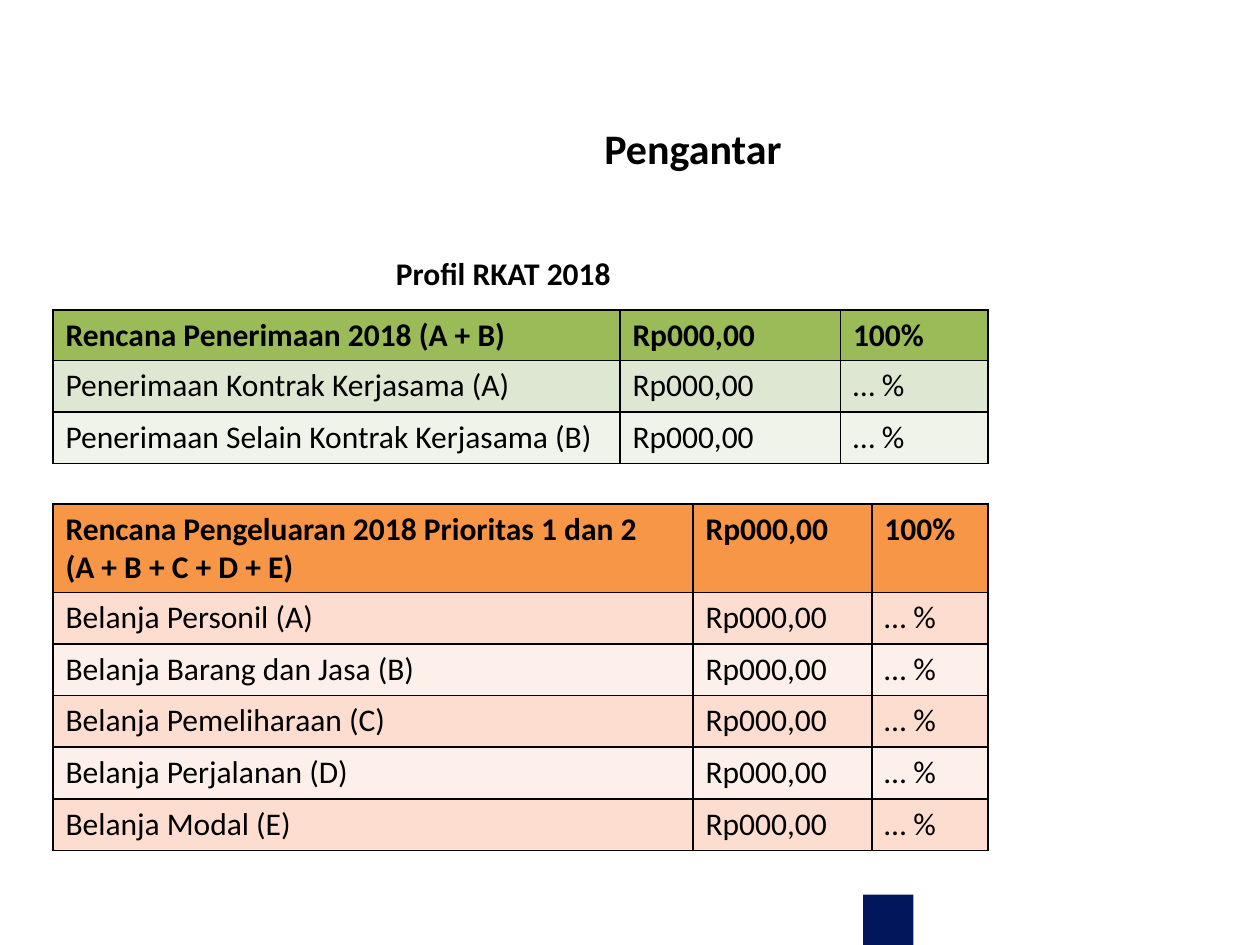
from lxml import etree
from pptx import Presentation
from pptx.dml.color import RGBColor
from pptx.enum.shapes import MSO_SHAPE
from pptx.enum.text import PP_ALIGN
from pptx.oxml.ns import qn
from pptx.util import Inches, Pt

RECTANGLE = MSO_SHAPE.RECTANGLE
LEFT, CENTER = PP_ALIGN.LEFT, PP_ALIGN.CENTER

FONT = "Calibri"
BLACK = RGBColor(0x00, 0x00, 0x00)
NAVY = RGBColor(0x02, 0x16, 0x5B)
GREEN = RGBColor(0x9B, 0xBB, 0x59)
GREEN_BANDS = (RGBColor(0xDE, 0xE7, 0xD1), RGBColor(0xEF, 0xF3, 0xEA))
ORANGE = RGBColor(0xF7, 0x96, 0x46)
ORANGE_BANDS = (RGBColor(0xFC, 0xDD, 0xCF), RGBColor(0xFD, 0xEF, 0xE9))

ROW_HEIGHT = 0.41
AMOUNT = "Rp000,00"
TOTAL_SHARE = "100%"
SHARE = "… %"

INCOME_TITLE = "Rencana Penerimaan 2018 (A + B)"
INCOME_ITEMS = [
    "Penerimaan Kontrak Kerjasama (A)",
    "Penerimaan Selain Kontrak Kerjasama (B)",
]
SPENDING_TITLE = "Rencana Pengeluaran 2018 Prioritas 1 dan 2\n(A + B + C + D + E)"
SPENDING_ITEMS = [
    "Belanja Personil (A)",
    "Belanja Barang dan Jasa (B)",
    "Belanja Pemeliharaan (C)",
    "Belanja Perjalanan (D)",
    "Belanja Modal (E)",
]


def write_text(text_frame, text, size=18, bold=False, align=LEFT):
    """Write one paragraph for each line of the text."""
    text_frame.word_wrap = True
    text_frame.text = text
    for paragraph in text_frame.paragraphs:
        paragraph.alignment = align
        for run in paragraph.runs:
            run.font.name = FONT
            run.font.size = Pt(size)
            run.font.bold = bold
            run.font.color.rgb = BLACK


def add_heading(slide, box, text, size):
    shape = slide.shapes.add_textbox(*map(Inches, box))
    write_text(shape.text_frame, text, size=size, bold=True, align=CENTER)


def add_marker(slide, box):
    shape = slide.shapes.add_shape(RECTANGLE, *map(Inches, box))
    shape.shadow.inherit = False
    shape.fill.solid()
    shape.fill.fore_color.rgb = NAVY
    shape.line.fill.background()


def set_borders(cell):
    """Put a thin black line on all four sides, ahead of the cell fill."""
    properties = cell._tc.get_or_add_tcPr()
    for index, side in enumerate(("a:lnL", "a:lnR", "a:lnT", "a:lnB")):
        line = etree.Element(qn(side), w=str(Pt(1)))
        fill = etree.SubElement(line, qn("a:solidFill"))
        etree.SubElement(fill, qn("a:srgbClr"), val=str(BLACK))
        properties.insert(index, line)


def add_budget_table(slide, box, widths, title, items, header_color, bands):
    """Add a table with a bold total row above banded item rows."""
    rows = [(title, AMOUNT, TOTAL_SHARE)]
    rows += [(item, AMOUNT, SHARE) for item in items]
    frame = slide.shapes.add_table(len(rows), len(widths), *map(Inches, box))
    table = frame.table
    for column, width in zip(table.columns, widths):
        column.width = Inches(width)
    header_height = box[3] - ROW_HEIGHT * len(items)
    for row_index, values in enumerate(rows):
        is_header = row_index == 0
        color = header_color if is_header else bands[(row_index - 1) % 2]
        table.rows[row_index].height = Inches(header_height if is_header else ROW_HEIGHT)
        for column_index, value in enumerate(values):
            cell = table.cell(row_index, column_index)
            write_text(cell.text_frame, value, bold=is_header)
            cell.fill.solid()
            cell.fill.fore_color.rgb = color
            set_borders(cell)


def main():
    presentation = Presentation()
    presentation.slide_width = Inches(10)
    presentation.slide_height = Inches(7.5)
    slide = presentation.slides.add_slide(presentation.slide_layouts[6])

    add_marker(slide, (6.85, 7.1, 0.4, 0.4))
    add_heading(slide, (2.25, 0.92, 6.5, 0.5), "Pengantar", size=24)
    add_budget_table(slide, (0.42, 2.46, 7.42, 1.22), (4.5, 1.75, 1.17),
                     INCOME_TITLE, INCOME_ITEMS, GREEN, GREEN_BANDS)
    add_budget_table(slide, (0.42, 4, 7.42, 2.73), (5.08, 1.42, 0.92),
                     SPENDING_TITLE, SPENDING_ITEMS, ORANGE, ORANGE_BANDS)
    add_heading(slide, (2.58, 1.97, 2.83, 0.4), "Profil RKAT 2018", size=18)

    presentation.save("out.pptx")


if __name__ == "__main__":
    main()
